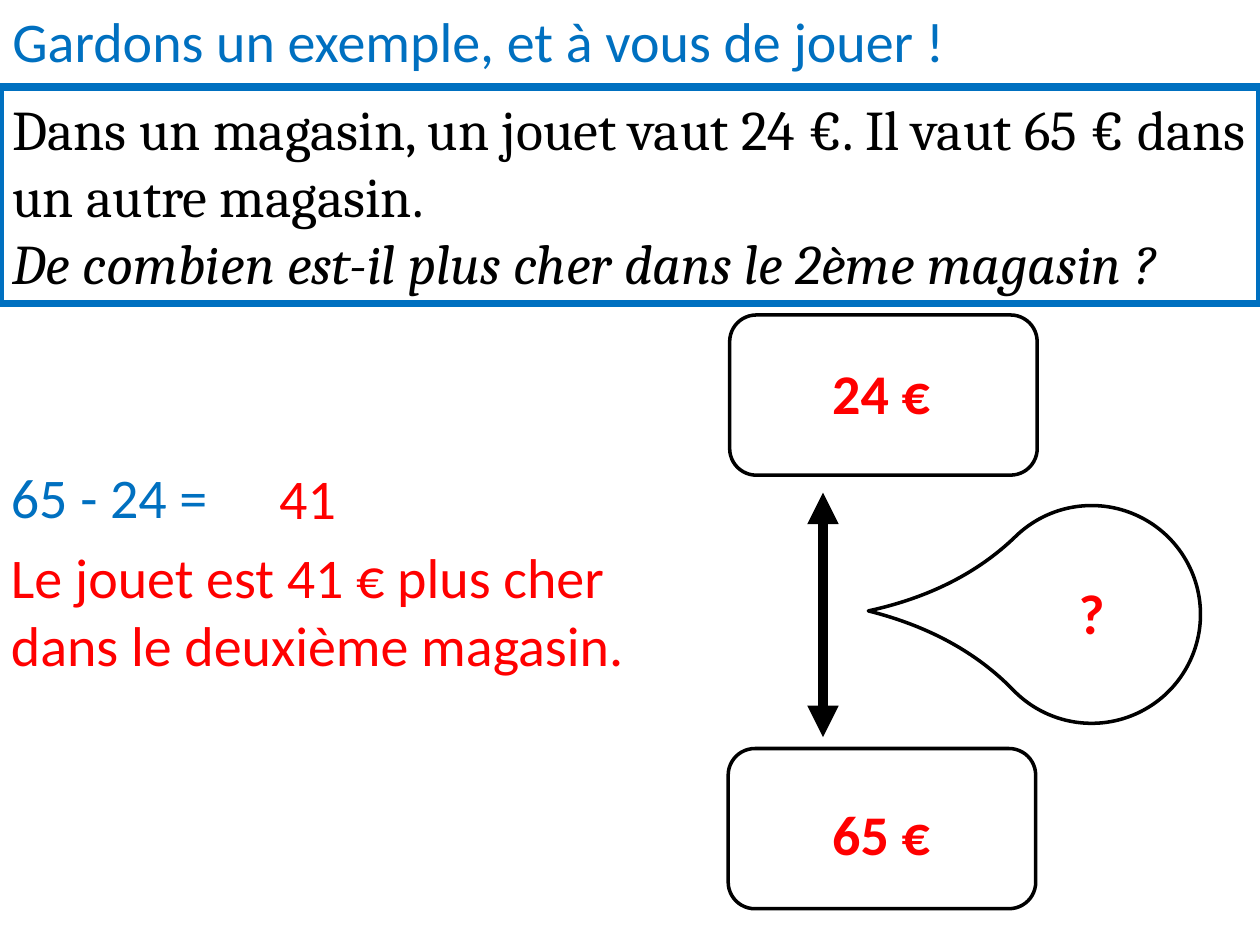
"""Builds the price comparison exercise slide."""
from dataclasses import dataclass

from lxml.etree import SubElement
from pptx import Presentation
from pptx.dml.color import RGBColor
from pptx.enum.shapes import MSO_CONNECTOR, MSO_SHAPE
from pptx.enum.text import PP_ALIGN
from pptx.oxml.ns import qn
from pptx.util import Cm, Pt

BLUE = RGBColor(0x00, 0x70, 0xC0)
RED = RGBColor(0xFF, 0x00, 0x00)
BLACK = RGBColor(0x00, 0x00, 0x00)
LINE_H = 1.63


@dataclass
class Label:
    text: str
    x: float
    y: float
    w: float
    h: float = LINE_H
    color: RGBColor = RED
    centered_bold: bool = False


@dataclass
class Outline:
    kind: MSO_SHAPE
    x: float
    y: float
    w: float
    h: float
    color: RGBColor = BLACK
    weight: float = 2


LABELS = [
    Label("Gardons un exemple, et à vous de jouer !", 0, 0, 25.4, color=BLUE),
    Label("24 €", 15.06, 7.11, 5.41, centered_bold=True),
    Label("65 €", 15.06, 16, 5.41, centered_bold=True),
    Label("65 - 24 =", -0.03, 9.19, 5.79, color=BLUE),
    Label("Le jouet est 41 € plus cher dans le deuxième magasin.", -0.03, 10.82, 14.68, 3),
    Label("41", 5.38, 9.22, 5.79),
    Label("?", 19.3, 11.53, 5.41, centered_bold=True),
]
PROBLEM = Outline(MSO_SHAPE.RECTANGLE, 0, 1.75, 25.4, 4.37, BLUE, 4.5)
PRICE_BOXES = [
    Outline(MSO_SHAPE.ROUNDED_RECTANGLE, 14.71, 6.35, 6.2, 3.23),
    Outline(MSO_SHAPE.ROUNDED_RECTANGLE, 14.68, 15.09, 6.2, 3.23),
]
BUBBLE = Outline(MSO_SHAPE.TEAR, 19.81, 10.19, 4.39, 4.39)


def style(p, font: str, color: RGBColor) -> None:
    p.font.name = font
    p.font.size = Pt(32)
    p.font.color.rgb = color


def add_outline(s, o: Outline):
    sp = s.shapes.add_shape(o.kind, Cm(o.x), Cm(o.y), Cm(o.w), Cm(o.h))
    sp.shadow.inherit = False
    sp.fill.background()
    sp.line.color.rgb = o.color
    sp.line.width = Pt(o.weight)
    return sp


def add_label(s, label: Label) -> None:
    sp = s.shapes.add_textbox(Cm(label.x), Cm(label.y), Cm(label.w), Cm(label.h))
    tf = sp.text_frame
    tf.word_wrap = True
    p = tf.paragraphs[0]
    p.text = label.text
    style(p, "Calibri", label.color)
    if label.centered_bold:
        p.alignment = PP_ALIGN.CENTER
        p.font.bold = True


def add_problem(s) -> None:
    tf = add_outline(s, PROBLEM).text_frame
    tf.word_wrap = True
    tf.text = (
        "Dans un magasin, un jouet vaut 24 €. Il vaut 65 € dans un autre magasin.\n"
        "De combien est-il plus cher dans le 2ème magasin ?"
    )
    for p in tf.paragraphs:
        p.alignment = PP_ALIGN.LEFT
        style(p, "Cambria", BLACK)
    tf.paragraphs[1].font.italic = True


def add_double_arrow(s, x: float, top: float, bottom: float) -> None:
    c = s.shapes.add_connector(MSO_CONNECTOR.STRAIGHT, Cm(x), Cm(top), Cm(x), Cm(bottom))
    c.line.color.rgb = BLACK
    c.line.width = Pt(6)
    ln = c.line._get_or_add_ln()
    for end in ("a:headEnd", "a:tailEnd"):
        SubElement(ln, qn(end), type="triangle")
    SubElement(c._element.spPr, qn("a:effectLst"))


def main() -> None:
    prs = Presentation()
    prs.slide_width, prs.slide_height = Cm(25.4), Cm(19.05)
    s = prs.slides.add_slide(prs.slide_layouts[6])
    add_problem(s)
    for box in PRICE_BOXES:
        add_outline(s, box)
    add_double_arrow(s, 16.59, 9.93, 14.86)
    bubble = add_outline(s, BUBBLE)
    bubble.adjustments[0] = 1.45
    bubble.rotation = 225.9
    for label in LABELS:
        add_label(s, label)
    prs.save("out.pptx")


if __name__ == "__main__":
    main()
